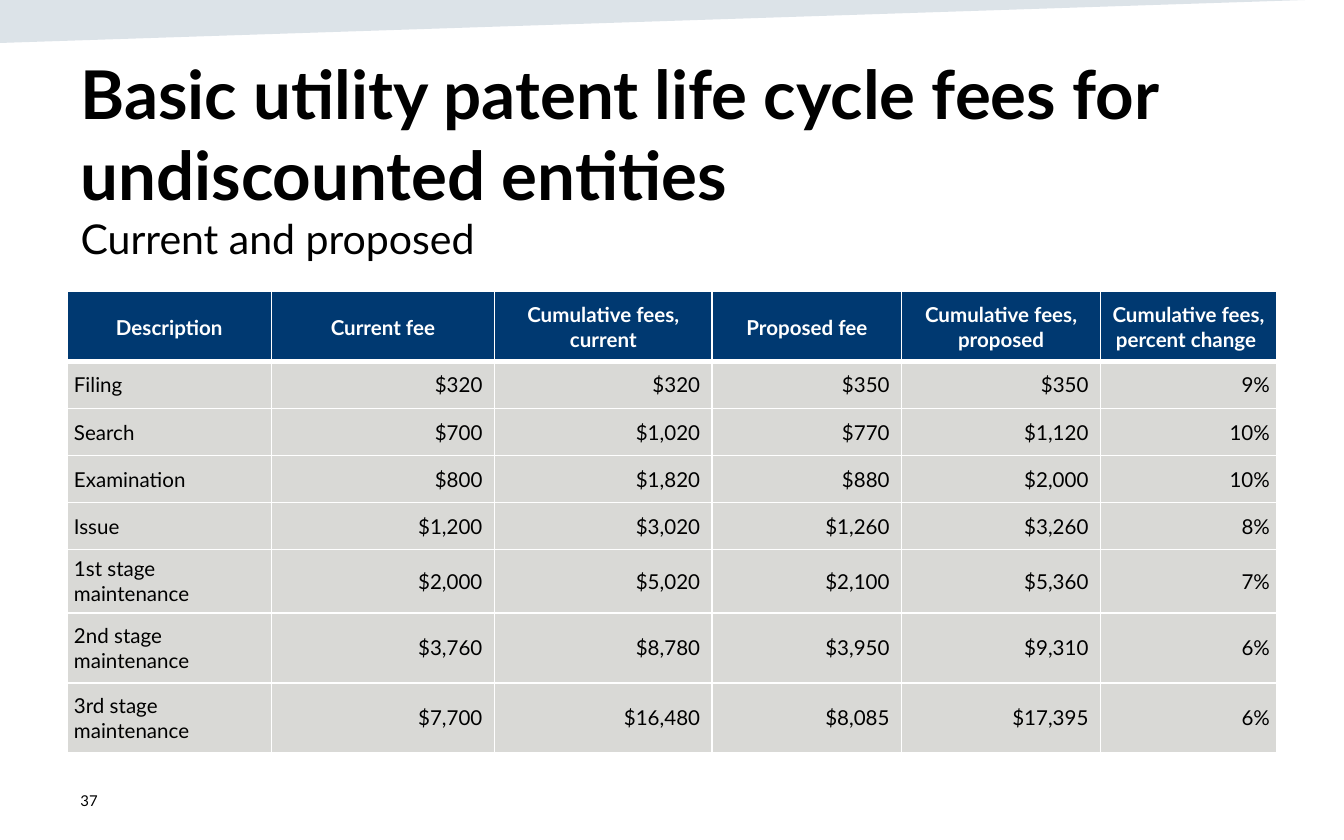
import copy

import pptx
import pptx.dml.color
import pptx.enum.text
import pptx.oxml
import pptx.oxml.ns
import pptx.util
from pptx.util import Inches

FONT = "Lato"
COLORS = {"wedge": "164469", "header": "003971", "body": "D9D9D6",
          "white": "FFFFFF", "text": "000000"}
COLUMN_WIDTHS = [1.52, 1.66, 1.62, 1.41, 1.48, 1.31]
ROW_HEIGHTS = [0.52] + [0.35] * 4 + [0.47, 0.52, 0.52]
FEES = [
    ["Description", "Current fee", "Cumulative fees, current", "Proposed fee",
     "Cumulative fees, proposed", "Cumulative fees, percent change "],
    ["Filing", "$320 ", "$320 ", "$350 ", "$350 ", "9%"],
    ["Search", "$700 ", "$1,020 ", "$770 ", "$1,120 ", "10%"],
    ["Examination", "$800 ", "$1,820 ", "$880 ", "$2,000 ", "10%"],
    ["Issue", "$1,200 ", "$3,020 ", "$1,260 ", "$3,260 ", "8%"],
    ["1st stage maintenance", "$2,000 ", "$5,020 ", "$2,100 ", "$5,360 ", "7%"],
    ["2nd stage maintenance", "$3,760 ", "$8,780 ", "$3,950 ", "$9,310 ", "6%"],
    ["3rd stage maintenance", "$7,700 ", "$16,480 ", "$8,085 ", "$17,395 ", "6%"],
]
ALIGN = pptx.enum.text.PP_ALIGN
ANCHOR = pptx.enum.text.MSO_ANCHOR


def rgb(name):
    return pptx.dml.color.RGBColor.from_string(COLORS[name])


def format_run(r, size, color="text", bold=False):
    r.font.name = FONT
    r.font.size = pptx.util.Pt(size)
    r.font.bold = bold
    r.font.color.rgb = rgb(color)


def add_wedge(s, left, top, width, height):
    fb = s.shapes.build_freeform(Inches(left), Inches(top))
    fb.add_line_segments([(Inches(left), Inches(top + height)),
                          (Inches(left + width), Inches(top - 0.01))])
    sp = fb.convert_to_shape()
    sp.shadow.inherit = False
    sp.line.fill.background()
    sp.fill.solid()
    sp.fill.fore_color.rgb = rgb("wedge")
    color = sp._element.spPr.find(".//" + pptx.oxml.ns.qn("a:srgbClr"))
    color.append(pptx.oxml.parse_xml(
        f'<a:alpha {pptx.oxml.ns.nsdecls("a")} val="15000"/>'))


def fill_title(s, left, top, width, height):
    sp = s.shapes.title
    sp.left, sp.top, sp.width, sp.height = map(Inches, (left, top, width, height))
    tf = sp.text_frame
    tf.word_wrap = True
    tf.auto_size = pptx.enum.text.MSO_AUTO_SIZE.NONE
    tf.vertical_anchor = ANCHOR.TOP
    p = tf.paragraphs[0]
    p.text = ("Basic utility patent life cycle fees for \v"
              "undiscounted entities\vCurrent and proposed")
    p.alignment = ALIGN.LEFT
    for r, size in zip(p.runs, [36, 36, 22]):
        format_run(r, size, bold=size == 36)
    # Each line break takes the size of the line it ends.
    for br in p._p.findall(pptx.oxml.ns.qn("a:br")):
        br.append(copy.deepcopy(br.getprevious().rPr))


def set_borders(cell, bottom):
    """Draw white borders, 1 pt wide except for the given bottom width."""
    tcPr = cell._tc.get_or_add_tcPr()
    for i, (side, width) in enumerate(
            [("lnL", 1), ("lnR", 1), ("lnT", 1), ("lnB", bottom)]):
        tcPr.insert(i, pptx.oxml.parse_xml(
            f'<a:{side} {pptx.oxml.ns.nsdecls("a")} w="{pptx.util.Pt(width)}">'
            f'<a:solidFill><a:srgbClr val="{COLORS["white"]}"/></a:solidFill>'
            f'</a:{side}>'))


def fill_cell(cell, text, header, align):
    cell.fill.solid()
    cell.fill.fore_color.rgb = rgb("header" if header else "body")
    inset = Inches(0.01 if header else 0.05)
    cell.margin_left = cell.margin_right = cell.margin_top = inset
    cell.margin_bottom = 0 if header else inset
    cell.vertical_anchor = ANCHOR.MIDDLE
    p = cell.text_frame.paragraphs[0]
    p.text = text
    p.alignment = align
    format_run(p.runs[0], 11, "white" if header else "text", header)
    set_borders(cell, 3 if header else 1)


def add_fee_table(s, left, top):
    table = s.shapes.add_table(
        len(FEES), len(COLUMN_WIDTHS), Inches(left), Inches(top),
        Inches(sum(COLUMN_WIDTHS)), Inches(sum(ROW_HEIGHTS))).table
    for column, width in zip(table.columns, COLUMN_WIDTHS):
        column.width = Inches(width)
    for i, (row, height) in enumerate(zip(table.rows, ROW_HEIGHTS)):
        row.height = Inches(height)
        for j, cell in enumerate(row.cells):
            align = ALIGN.CENTER if i == 0 else ALIGN.RIGHT if j else ALIGN.LEFT
            fill_cell(cell, FEES[i][j], i == 0, align)


def add_page_number(s, left, top, width, height):
    tf = s.shapes.add_textbox(*map(Inches, (left, top, width, height))).text_frame
    tf.word_wrap = True
    tf.vertical_anchor = ANCHOR.MIDDLE
    tf.text = "37"
    format_run(tf.paragraphs[0].runs[0], 8)


def main():
    prs = pptx.Presentation()
    prs.slide_width, prs.slide_height = Inches(10), Inches(6.25)
    s = prs.slides.add_slide(prs.slide_layouts[5])
    add_wedge(s, 0, 0, 10.02, 0.32)
    fill_title(s, 0.5, 0.34, 9, 1.04)
    add_fee_table(s, 0.5, 2.17)
    add_page_number(s, 0.5, 5.79, 2.25, 0.33)
    prs.save("out.pptx")


if __name__ == "__main__":
    main()
